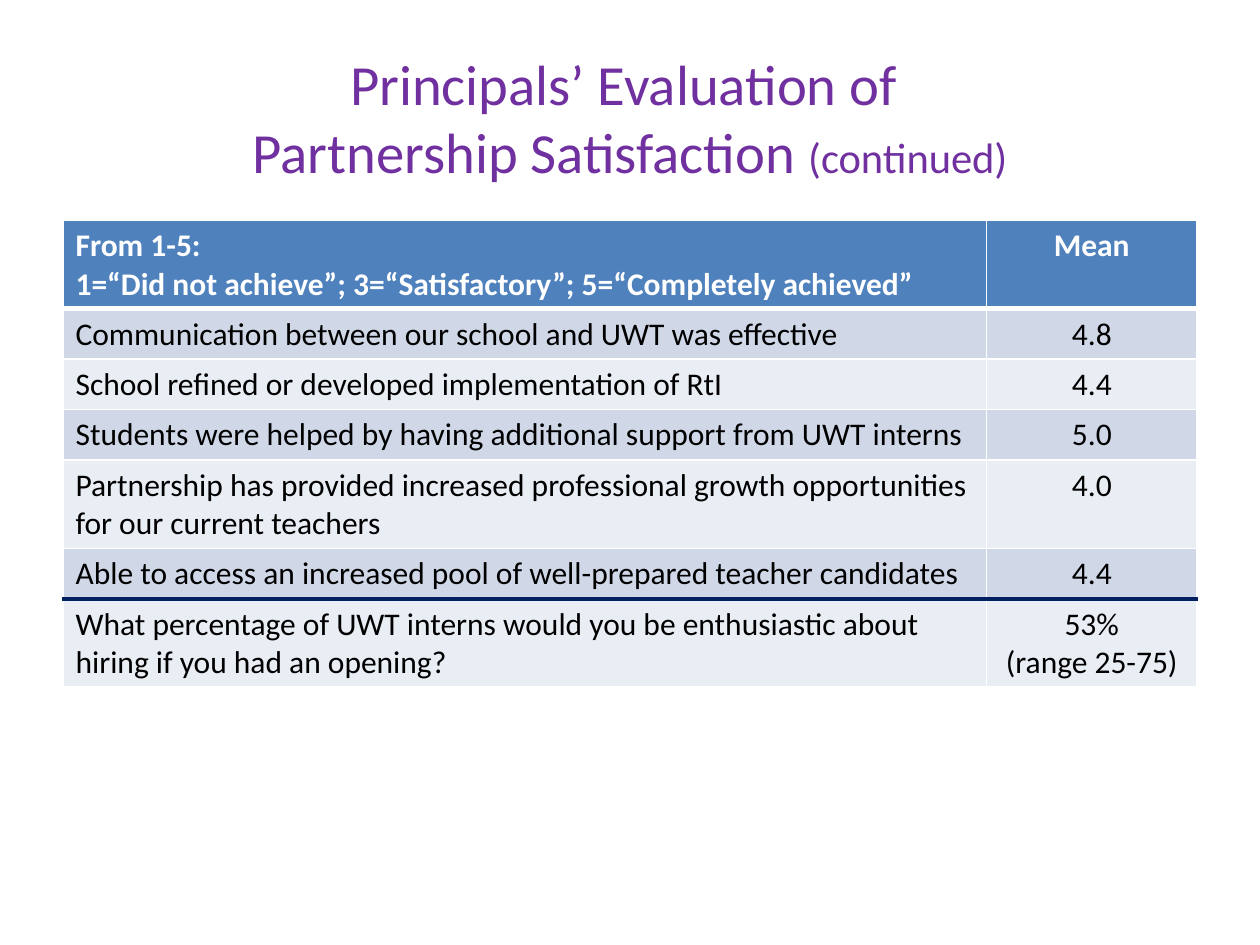
from dataclasses import dataclass

from lxml.etree import SubElement
from pptx import Presentation
from pptx.dml.color import RGBColor
from pptx.enum.text import MSO_ANCHOR, PP_ALIGN
from pptx.oxml.ns import qn
from pptx.util import Inches, Pt

WHITE = RGBColor(0xFF, 0xFF, 0xFF)
BLACK = RGBColor(0x00, 0x00, 0x00)
PURPLE = RGBColor(0x70, 0x30, 0xA0)
BLUE = RGBColor(0x4F, 0x81, 0xBD)
NAVY = RGBColor(0x00, 0x20, 0x60)
BANDS = (RGBColor(0xE9, 0xED, 0xF4), RGBColor(0xD0, 0xD8, 0xE8))

WIDE, HIGH = Inches(10), Inches(7.5)
EDGE = 0.05
SPAN = 1 - 2 * EDGE
COLS = (7.33, 1.67)
LINE, PAD = 0.3, 0.1


@dataclass
class Edge:
    color: RGBColor
    width: float


@dataclass
class Row:
    label: str
    mean: str
    lines: int = 1


THIN = Edge(WHITE, 1)
THICK = Edge(WHITE, 3)
RULE = Edge(NAVY, 2.25)

ROWS = (
    Row("From 1-5:\n1=“Did not achieve”; 3=“Satisfactory”; 5=“Completely achieved”", "Mean", 2),
    Row("Communication between our school and UWT was effective", "4.8"),
    Row("School refined or developed implementation of RtI", "4.4"),
    Row("Students were helped by having additional support from UWT interns", "5.0"),
    Row("Partnership has provided increased professional growth opportunities "
        "for our current teachers", "4.0", 2),
    Row("Able to access an increased pool of well-prepared teacher candidates", "4.4"),
    Row("What percentage of UWT interns would you be enthusiastic about "
        "hiring if you had an opening?", "53%\n(range 25-75)", 2),
)
RULES = {1: THICK, len(ROWS) - 1: RULE}


def style(font, color: RGBColor, **form) -> None:
    for key, value in ({"name": "Calibri"} | form).items():
        setattr(font, key, value)
    font.color.rgb = color


def border(cell, side: str, edge: Edge) -> None:
    line = SubElement(cell._tc.get_or_add_tcPr(), qn(f"a:ln{side}"), w=str(Pt(edge.width)))
    fill = SubElement(line, qn("a:solidFill"))
    SubElement(fill, qn("a:srgbClr"), val=str(edge.color))


def draw_cell(cell, text: str, row: int, col: int) -> None:
    head = row == 0
    sides = {"L": THIN, "R": THIN, "T": RULES.get(row, THIN), "B": RULES.get(row + 1, THIN)}
    for side, edge in sides.items():
        border(cell, side, edge)
    cell.fill.solid()
    cell.fill.fore_color.rgb = BLUE if head else BANDS[row % 2]
    cell.text = text
    for para in cell.text_frame.paragraphs:
        para.alignment = PP_ALIGN.CENTER if col else PP_ALIGN.LEFT
        for run in para.runs:
            style(run.font, WHITE if head else BLACK, size=Pt(18), bold=head)


def draw_table(slide) -> None:
    highs = [Inches(PAD + LINE * row.lines) for row in ROWS]
    grid = slide.shapes.add_table(
        len(ROWS), len(COLS), int(WIDE * EDGE), Inches(1.75), int(WIDE * SPAN), sum(highs)
    ).table
    for col, width in zip(grid.columns, COLS):
        col.width = Inches(width)
    for r, (row, high) in enumerate(zip(ROWS, highs)):
        grid.rows[r].height = high
        for c, text in enumerate((row.label, row.mean)):
            draw_cell(grid.cell(r, c), text, r, c)


def draw_title(slide) -> None:
    box = slide.shapes.add_textbox(
        int(WIDE * EDGE), int(HIGH * 0.04), int(WIDE * SPAN), int(HIGH / 6)
    )
    frame = box.text_frame
    for key, value in {"word_wrap": True, "vertical_anchor": MSO_ANCHOR.MIDDLE}.items():
        setattr(frame, key, value)
    para = frame.paragraphs[0]
    para.alignment = PP_ALIGN.CENTER
    para.text = "Principals’ Evaluation of \vPartnership Satisfaction "
    para.add_run().text = "(continued)"
    style(para.font, PURPLE, size=Pt(32.4))
    for run in para.runs:
        style(run.font, PURPLE, size=Pt(32.4))
    para.runs[-1].font.size = Pt(24.3)


def main() -> None:
    deck = Presentation()
    deck.slide_width, deck.slide_height = WIDE, HIGH
    slide = deck.slides.add_slide(deck.slide_layouts[6])
    draw_title(slide)
    draw_table(slide)
    deck.save("out.pptx")


if __name__ == "__main__":
    main()
